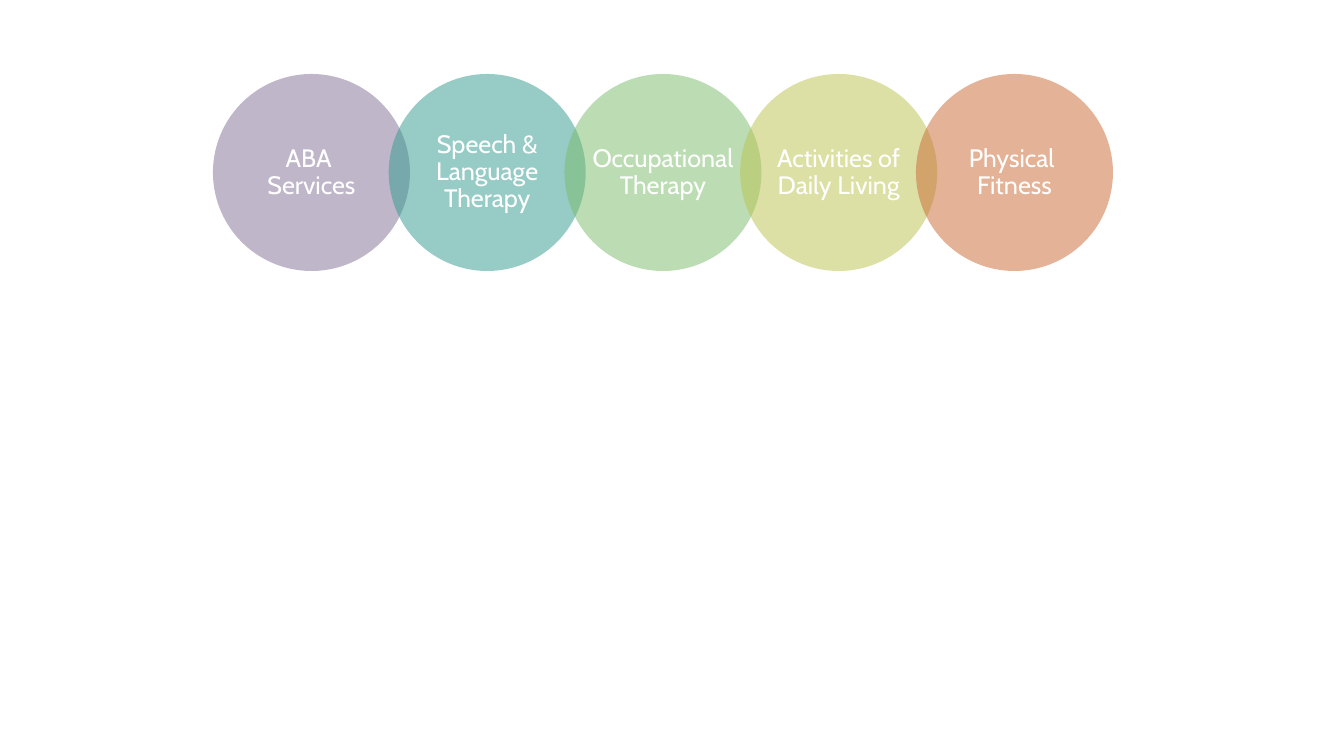
from lxml import etree
from pptx import Presentation
from pptx import util as u
from pptx.dml.color import RGBColor
from pptx.enum import shapes, text
from pptx.oxml.ns import qn

PX = 914400 / 100.8
FIRST_LEFT, LAST_LEFT = 213, 916
TOP, DIAMETER = 74, 197

# label, fill colour, opacity in percent
SERVICES = [
    ("ABA \vServices", "5F497A", 40),
    ("Speech &\vLanguage\vTherapy", "319B8F", 50),
    ("Occupational\vTherapy", "7ABC69", 50),
    ("Activities of\vDaily Living", "BAC34D", 50),
    ("Physical \vFitness", "C96731", 50),
]


def px(length):
    return u.Emu(round(length * PX))


def color(value):
    return RGBColor.from_string(value)


def fill_translucent(shape, value, opacity):
    shape.fill.solid()
    shape.fill.fore_color.rgb = color(value)
    tint = shape._element.spPr.find(qn("a:solidFill"))[0]
    etree.SubElement(tint, qn("a:alpha")).set("val", str(opacity * 1000))


def add_circle(slide, left, label, value, opacity):
    circle = slide.shapes.add_shape(
        shapes.MSO_SHAPE.OVAL, px(left), px(TOP), px(DIAMETER), px(DIAMETER))
    circle.shadow.inherit = False
    circle.line.fill.background()
    fill_translucent(circle, value, opacity)

    frame = circle.text_frame
    frame.text = label
    frame.word_wrap = False
    frame.vertical_anchor = text.MSO_ANCHOR.MIDDLE
    frame.margin_left = frame.margin_right = 0
    frame.margin_top = frame.margin_bottom = 0
    para = frame.paragraphs[0]
    para.alignment = text.PP_ALIGN.CENTER
    para.line_spacing = 0.9
    for span in para.runs:
        span.font.name = "Cabin"
        span.font.size = u.Pt(18)
        span.font.color.rgb = color("FFFFFF")


def main():
    deck = Presentation()
    deck.slide_width, deck.slide_height = px(1344), px(756)
    slide = deck.slides.add_slide(deck.slide_layouts[6])
    step = (LAST_LEFT - FIRST_LEFT) / (len(SERVICES) - 1)
    for index, (label, value, opacity) in enumerate(SERVICES):
        add_circle(slide, FIRST_LEFT + index * step, label, value, opacity)
    deck.save("out.pptx")


if __name__ == "__main__":
    main()
